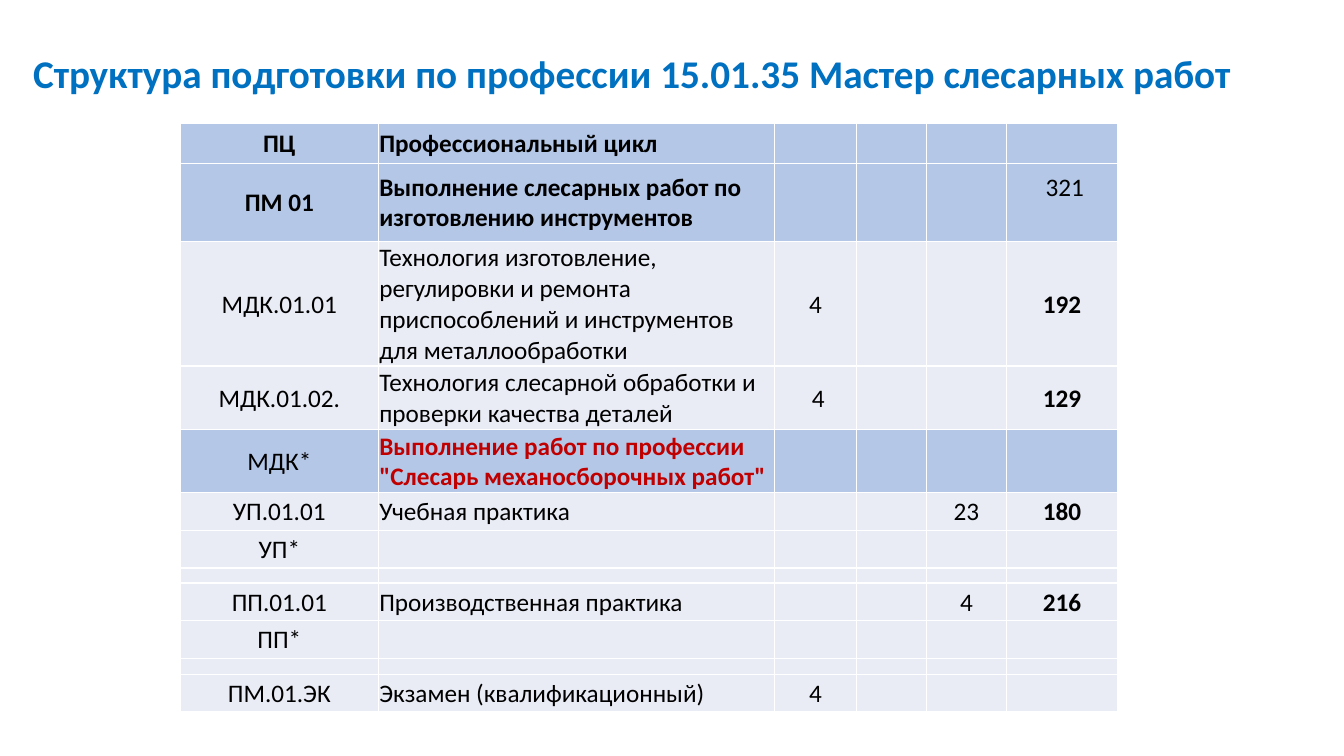
from lxml.etree import SubElement
from pptx import Presentation
from pptx.dml.color import RGBColor
from pptx.enum.text import MSO_ANCHOR, PP_ALIGN
from pptx.oxml.ns import qn
from pptx.util import Cm, Pt

BLUE, RED, BLACK, WHITE = "0070C0", "C00000", "000000", "FFFFFF"
HEADING_FILL, ROW_FILL = "B4C7E7", "E9EBF5"


def color(value):
    return RGBColor.from_string(value)


class SlideBuilder:
    font = "Calibri"
    table_size = 18
    empty_size = 8
    inset = 0.03

    def __init__(self, deck):
        self.page = deck.slides.add_slide(deck.slide_layouts[5])

    def add_span(self, para, text, size, ink, bold):
        span = para.add_run()
        span.text = text
        span.font.name = self.font
        span.font.size = Pt(size)
        span.font.bold = bold
        span.font.color.rgb = color(ink)

    def title(self, text, left, top, width, height):
        box = self.page.shapes.title
        box.left, box.top, box.width, box.height = map(Cm, (left, top, width, height))
        box.text_frame.vertical_anchor = MSO_ANCHOR.MIDDLE
        para = box.text_frame.paragraphs[0]
        para.alignment = PP_ALIGN.LEFT
        para.line_spacing = 0.9
        self.add_span(para, text, 28, BLUE, True)

    def table(self, left, top, widths, heights):
        frame = self.page.shapes.add_table(
            len(heights), len(widths), Cm(left), Cm(top), Cm(sum(widths)), Cm(sum(heights)))
        grid = frame.table
        grid.first_row = grid.horz_banding = False
        for column, width in zip(grid.columns, widths):
            column.width = Cm(width)
        for row, height in zip(grid.rows, heights):
            row.height = Cm(height)
        return grid

    def borders(self, cell):
        properties = cell._tc.get_or_add_tcPr()
        for position, side in enumerate(("lnL", "lnR", "lnT", "lnB")):
            line = properties.makeelement(qn("a:" + side), {"w": str(Pt(1))})
            properties.insert(position, line)
            fill = SubElement(line, qn("a:solidFill"))
            SubElement(fill, qn("a:srgbClr"), val=WHITE)

    def cell(self, cell, text, fill, align, ink=BLACK, bold=False):
        cell.fill.solid()
        cell.fill.fore_color.rgb = color(fill)
        self.borders(cell)
        cell.vertical_anchor = MSO_ANCHOR.MIDDLE
        cell.margin_left = cell.margin_right = cell.margin_top = Cm(self.inset)
        cell.margin_bottom = 0
        para = cell.text_frame.paragraphs[0]
        para.alignment = align
        if text:
            self.add_span(para, text, self.table_size, ink, bold)
        else:
            # Small end mark lets the spacer rows stay low
            para._p.get_or_add_endParaRPr().set("sz", str(self.empty_size * 100))


# Row height, code, name and the filled number columns
ROWS = [
    (0.99, "ПЦ", "Профессиональный цикл", {}),
    (1.98, "ПМ 01", "Выполнение слесарных работ по изготовлению инструментов", {5: " 321"}),
    (3.13, "МДК.01.01",
     "Технология изготовление, регулировки и ремонта приспособлений и инструментов "
     "для металлообработки", {2: "4", 5: "192"}),
    (1.61, "МДК.01.02.", "Технология слесарной обработки и проверки качества деталей",
     {2: " 4", 5: "129"}),
    (1.57, "МДК*", 'Выполнение работ по профессии "Слесарь механосборочных работ"', {}),
    (0.95, "УП.01.01", "Учебная практика", {4: "23", 5: "180"}),
    (0.95, "УП*", "", {}),
    (0.38, "", "", {}),
    (0.95, "ПП.01.01", "Производственная практика", {4: "4", 5: "216"}),
    (0.95, "ПП*", "", {}),
    (0.4, "", "", {}),
    (0.95, "ПM.01.ЭК", "Экзамен (квалификационный)", {2: "4"}),
]
WIDTHS = [4.98, 9.98, 2.08, 1.75, 2.03, 2.79]
CYCLE_ROWS, WORKER_ROW, MODULE_ROW = (0, 1), 4, 1
NAME_COLUMN, HOURS_COLUMN = 1, 5


def main():
    deck = Presentation()
    deck.slide_width, deck.slide_height = Cm(33.87), Cm(19.05)
    builder = SlideBuilder(deck)

    # Title
    builder.title("Структура подготовки по профессии 15.01.35 Мастер слесарных работ",
                  0.58, 1.02, 32.41, 1.78)

    # Curriculum table
    grid = builder.table(4.55, 3.12, WIDTHS, [row[0] for row in ROWS])
    for index, (_, code, name, numbers) in enumerate(ROWS):
        fill = HEADING_FILL if index in (*CYCLE_ROWS, WORKER_ROW) else ROW_FILL
        for column in range(len(WIDTHS)):
            text = {0: code, NAME_COLUMN: name, **numbers}.get(column, "")
            is_name = column == NAME_COLUMN
            is_worker = is_name and index == WORKER_ROW
            is_heading = index in CYCLE_ROWS and column <= NAME_COLUMN
            is_hours = column == HOURS_COLUMN and index != MODULE_ROW
            builder.cell(grid.cell(index, column), text, fill,
                         PP_ALIGN.LEFT if is_name else PP_ALIGN.CENTER,
                         RED if is_worker else BLACK,
                         is_heading or is_worker or is_hours)

    # Module total sits level with the first line of the name
    total = grid.cell(MODULE_ROW, HOURS_COLUMN)
    total.vertical_anchor = MSO_ANCHOR.TOP
    total.margin_top = Cm(0.23)

    deck.save("out.pptx")


if __name__ == "__main__":
    main()
